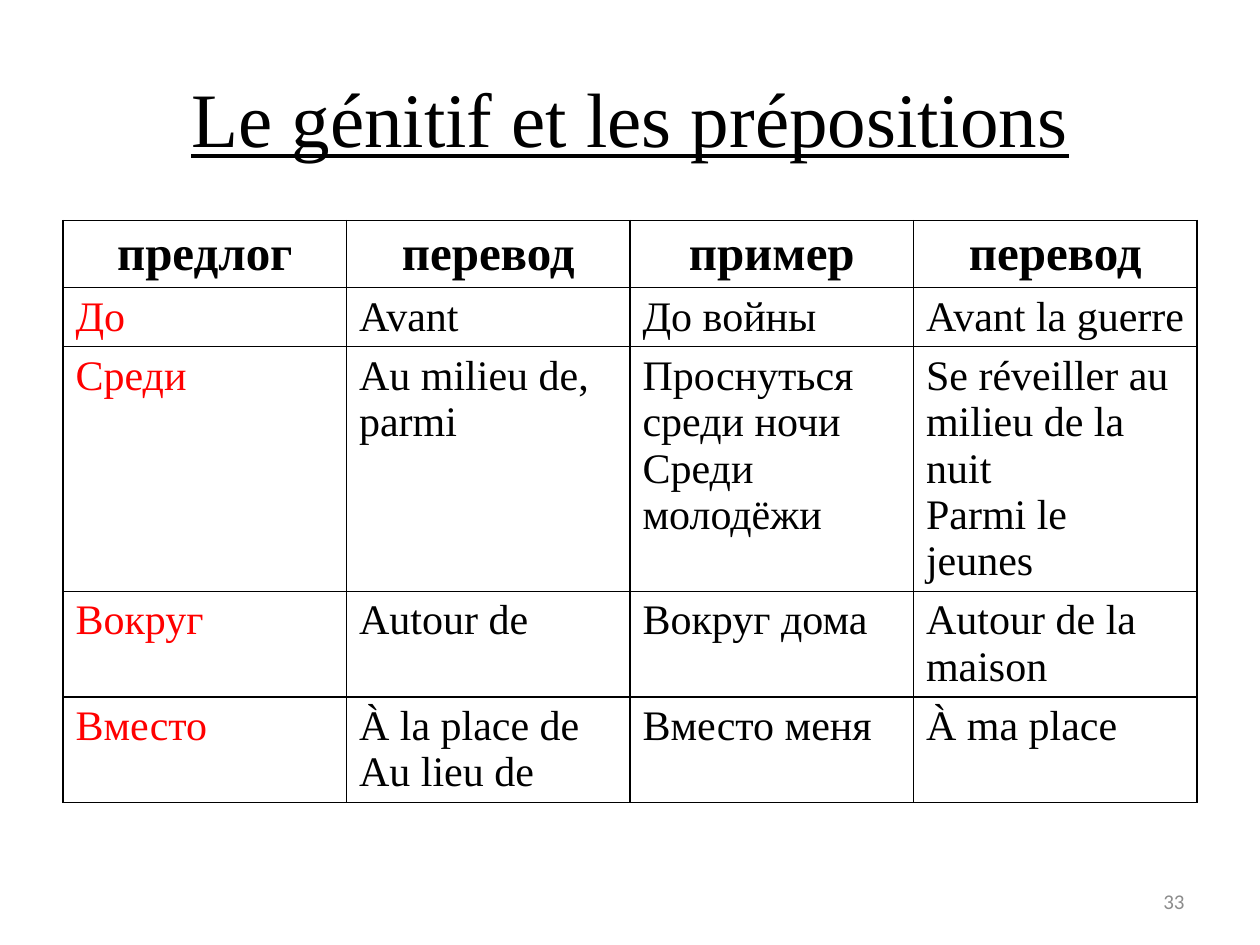
from lxml import etree
from pptx import Presentation
from pptx.dml.color import RGBColor
from pptx.enum.text import MSO_ANCHOR, PP_ALIGN
from pptx.oxml.ns import qn
from pptx.util import Inches, Pt

LEFT, CENTER, RIGHT = PP_ALIGN.LEFT, PP_ALIGN.CENTER, PP_ALIGN.RIGHT
MIDDLE = MSO_ANCHOR.MIDDLE

BLACK = RGBColor(0x00, 0x00, 0x00)
RED = RGBColor(0xFF, 0x00, 0x00)
GRAY = RGBColor(0x8C, 0x8C, 0x8C)
SERIF = "Times New Roman"
SANS = "Calibri"

SLIDE_W, SLIDE_H = Inches(10), Inches(7.5)
MARGIN = Inches(0.5)
CONTENT_W = SLIDE_W - 2 * MARGIN
ROW_H = Inches(0.41)  # minimum height; rows grow with their text

# A line break separates the paragraphs of a cell
PREPOSITIONS = [
    ["предлог", "перевод", "пример", "перевод"],
    ["До", "Avant", "До войны", "Avant la guerre"],
    ["Среди", "Au milieu de, parmi",
     "Проснуться среди ночи\nСреди молодёжи",
     "Se réveiller au milieu de la nuit\nParmi le jeunes"],
    ["Вокруг", "Autour de", "Вокруг дома", "Autour de la maison"],
    ["Вместо", "À la place de\nAu lieu de", "Вместо меня", "À ma placе"],
]


def write(frame, text, size, color=BLACK, font=SERIF, align=LEFT,
          bold=False, underline=False):
    frame.text = text
    frame.word_wrap = True
    for paragraph in frame.paragraphs:
        paragraph.alignment = align
        for run in paragraph.runs:
            run.font.name = font
            run.font.size = Pt(size)
            run.font.bold = bold
            run.font.underline = underline
            run.font.color.rgb = color


def add_borders(cell):
    properties = cell._tc.get_or_add_tcPr()
    for side in ("a:lnL", "a:lnR", "a:lnT", "a:lnB"):
        line = etree.SubElement(properties, qn(side), w=str(Pt(1)))
        fill = etree.SubElement(line, qn("a:solidFill"))
        etree.SubElement(fill, qn("a:srgbClr"), val=str(BLACK))


def add_title(slide, text):
    title = slide.shapes.title
    title.left, title.top = MARGIN, Inches(0.3)
    title.width, title.height = CONTENT_W, Inches(1.25)
    title.text_frame.vertical_anchor = MIDDLE
    write(title.text_frame, text, 44, align=CENTER, underline=True)


def add_preposition_table(slide, rows):
    table = slide.shapes.add_table(
        len(rows), len(rows[0]), MARGIN, Inches(1.75),
        CONTENT_W, ROW_H * len(rows)).table
    table.first_row = table.horz_banding = False
    for r, row in enumerate(rows):
        for c, text in enumerate(row):
            cell = table.cell(r, c)
            add_borders(cell)
            cell.fill.background()
            if r == 0:
                write(cell.text_frame, text, 28, align=CENTER, bold=True)
            else:
                write(cell.text_frame, text, 24, RED if c == 0 else BLACK)


def add_slide_number(slide, number):
    width = Inches(2.33)
    box = slide.shapes.add_textbox(
        SLIDE_W - MARGIN - width, Inches(6.95), width, Inches(0.4))
    box.text_frame.vertical_anchor = MIDDLE
    write(box.text_frame, number, 12, GRAY, SANS, RIGHT)


def main():
    prs = Presentation()
    prs.slide_width, prs.slide_height = SLIDE_W, SLIDE_H
    slide = prs.slides.add_slide(prs.slide_layouts[5])  # title only

    add_title(slide, "Le génitif et les prépositions")
    add_preposition_table(slide, PREPOSITIONS)
    add_slide_number(slide, "33")

    prs.save("out.pptx")


if __name__ == "__main__":
    main()
